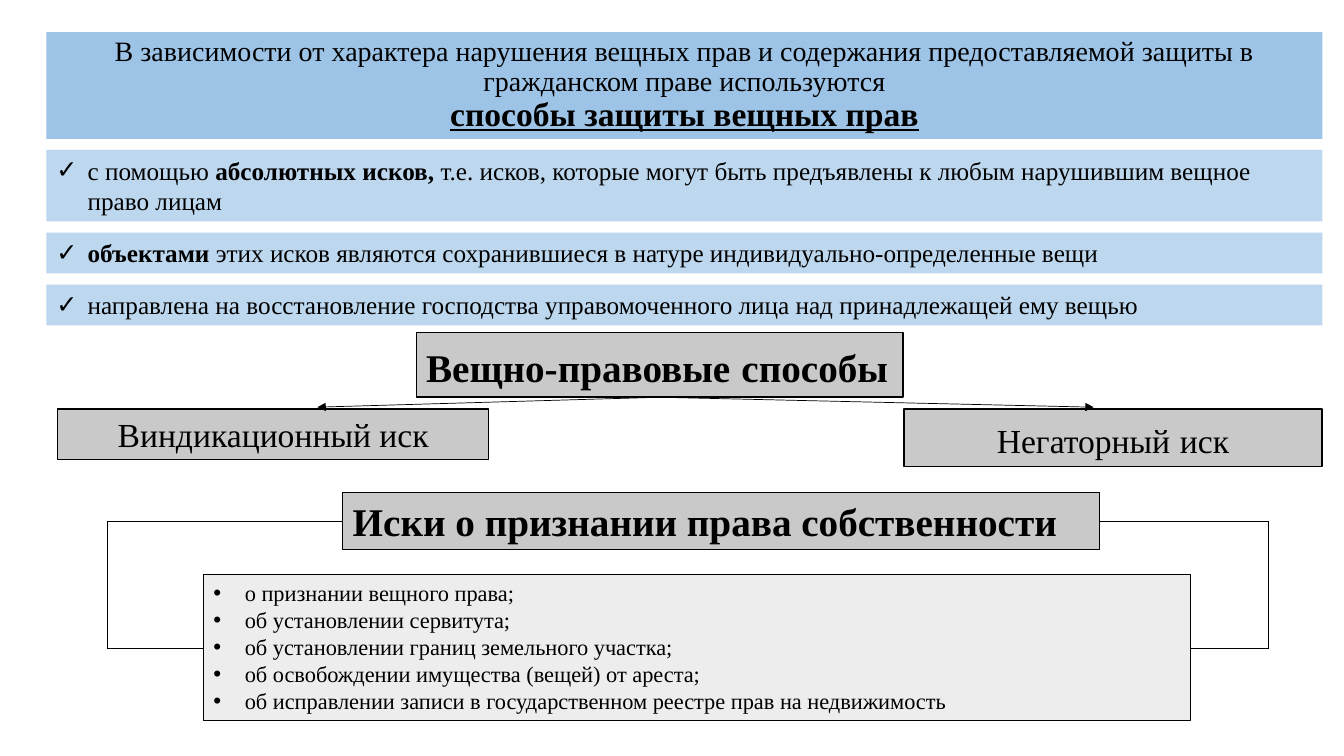
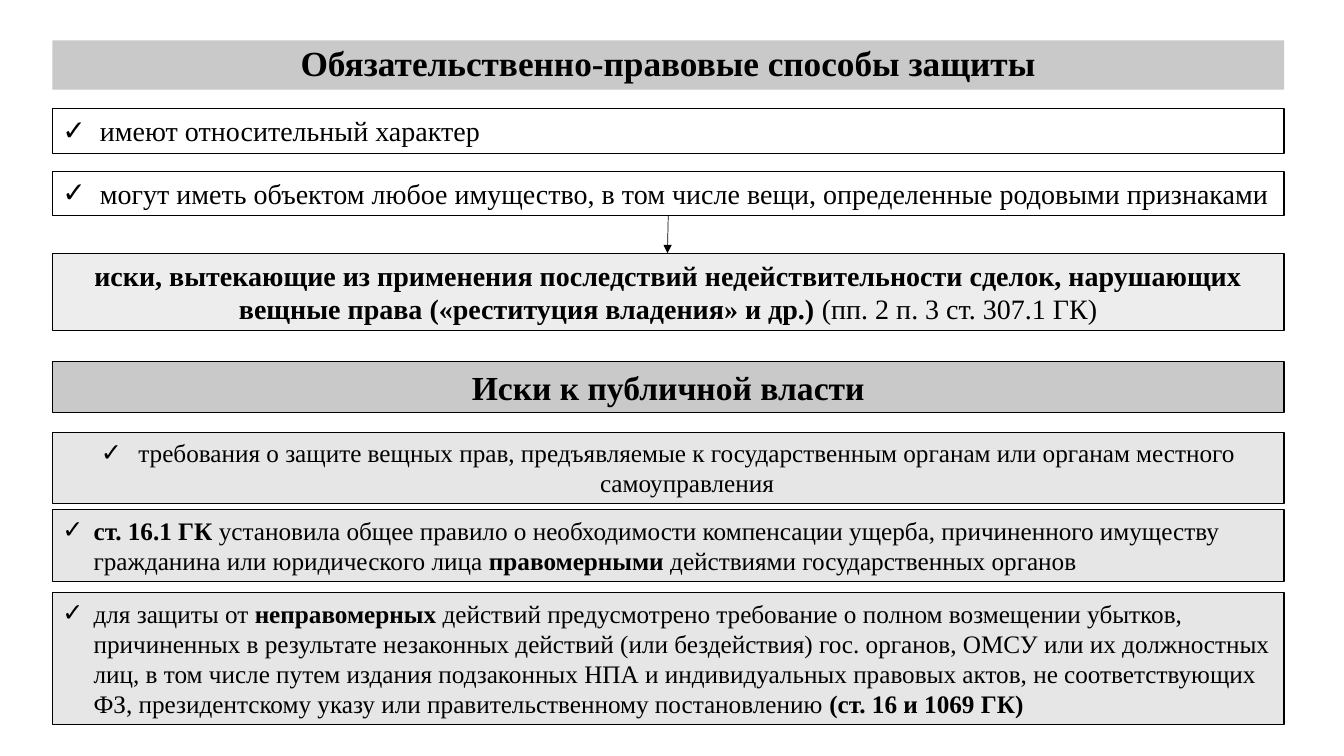
from lxml import etree
from pptx import Presentation
from pptx.dml.color import RGBColor
from pptx.enum import shapes, text
from pptx.oxml import ns
from pptx.util import Cm, Pt

COLOURS = {
    "black": "000000",
    "blue": "9DC3E6",
    "light_blue": "BDD7EE",
    "grey": "C9C9C9",
    "light_grey": "E7E6E6",
    "pale_grey": "EDEDED",
}
FONT = "Times New Roman"
CHECK, DOT = "✓", "•"
NARROW, WIDE = 0.79, 0.95  # bullet indents in cm
BOLD = {"bold": True}


def colour(name):
    return RGBColor.from_string(COLOURS[name])


class Deck:
    """The presentation, its shared style and the slide being filled."""

    def __init__(self):
        self.presentation = Presentation()
        self.presentation.slide_width = Cm(33.87)
        self.presentation.slide_height = Cm(19.05)
        self.slide = None

    def new_slide(self):
        self.slide = self.presentation.slides.add_slide(self.presentation.slide_layouts[6])

    def box(self, place, paragraphs, size, fill=None, line=0.75, bullet=None,
            indent=NARROW, centred=False, wrap=True):
        """Draw a text rectangle; each paragraph is a list of (text, font settings)."""
        shape = self.slide.shapes.add_shape(shapes.MSO_SHAPE.RECTANGLE, *map(Cm, place))
        shape.shadow.inherit = False
        if fill:
            shape.fill.solid()
            shape.fill.fore_color.rgb = colour(fill)
        else:
            shape.fill.background()
        if line:
            shape.line.color.rgb = colour("black")
            shape.line.width = Pt(line)
        else:
            shape.line.fill.background()
        frame = shape.text_frame
        frame.word_wrap = wrap
        frame.auto_size = text.MSO_AUTO_SIZE.SHAPE_TO_FIT_TEXT
        frame.vertical_anchor = text.MSO_ANCHOR.TOP
        for index, runs in enumerate(paragraphs):
            paragraph = frame.add_paragraph() if index else frame.paragraphs[0]
            paragraph.alignment = text.PP_ALIGN.CENTER if centred else text.PP_ALIGN.LEFT
            if bullet:
                self.bullet(paragraph, bullet, indent)
            paragraph.font.size = Pt(size)
            for words, settings in runs:
                self.run(paragraph, words, size, **settings)
        return shape

    def run(self, paragraph, words, size, bold=False, underline=False, own_size=None):
        run = paragraph.add_run()
        run.text = words
        font = run.font
        font.name = FONT
        font.size = Pt(own_size or size)
        font.bold = bold
        font.underline = underline
        font.color.rgb = colour("black")

    def bullet(self, paragraph, character, indent):
        properties = paragraph._p.get_or_add_pPr()
        properties.set("marL", str(Cm(indent)))
        properties.set("indent", str(-Cm(indent)))
        etree.SubElement(properties, ns.qn("a:buFont")).set("typeface", "Arial")
        etree.SubElement(properties, ns.qn("a:buChar")).set("char", character)

    def title(self, place, paragraphs, size, fill):
        shape = self.box(place, paragraphs, size, fill, line=None, centred=True)
        frame = shape.text_frame
        frame.auto_size = text.MSO_AUTO_SIZE.NONE
        frame.vertical_anchor = text.MSO_ANCHOR.MIDDLE
        for paragraph in frame.paragraphs:
            paragraph.line_spacing = 0.9

    def line(self, start, end, arrow=False):
        connector = self.slide.shapes.add_connector(
            shapes.MSO_CONNECTOR.STRAIGHT, *map(Cm, start + end))
        connector.line.color.rgb = colour("black")
        connector.line.width = Pt(0.5)
        if arrow:
            outline = connector.line._get_or_add_ln()
            etree.SubElement(outline, ns.qn("a:tailEnd")).set("type", "triangle")
        etree.SubElement(connector._element.spPr, ns.qn("a:effectLst"))

    def path_of_lines(self, points):
        for start, end in zip(points, points[1:]):
            self.line(start, end)


def property_methods(deck):
    deck.new_slide()
    left, width, gap = 1.17, 32.16, 0.28
    deck.title((left, 0.81, width, 2.69), [
        [("В зависимости от характера нарушения вещных прав и содержания "
          "предоставляемой защиты в гражданском праве используются", {})],
        [("способы защиты вещных прав", {"bold": True, "underline": True, "own_size": 24})],
    ], 20, "blue")

    features = [
        (1.8, [("с помощью ", {}), ("абсолютных исков, ", BOLD),
               ("т.е. исков, которые могут быть предъявлены к любым нарушившим "
                "вещное право лицам", {})]),
        (1.03, [("объектами ", BOLD),
                ("этих исков являются сохранившиеся в натуре "
                 "индивидуально-определенные вещи", {})]),
        (1.03, [("направлена на восстановление господства управомоченного лица "
                 "над принадлежащей ему вещью", {})]),
    ]
    top = 3.5 + gap
    for height, runs in features:
        deck.box((left, top, width, height), [runs], 18, "light_blue", None, CHECK)
        top += height + gap

    deck.box((10.49, 8.38, 12.27, 1.63), [[
        ("Вещно-правовые", BOLD), (" ", {"bold": True, "own_size": 32}), ("способы", BOLD),
    ]], 28, "grey", 1, wrap=False)
    deck.box((1.45, 10.31, 10.87, 1.27), [[("Виндикационный иск", {})]],
             24, "grey", 1, centred=True)
    deck.box((22.78, 10.31, 10.54, 1.45), [[
        ("Негаторный", {}), (" ", {"own_size": 28}), ("иск", {}),
    ]], 24, "grey", 1, centred=True)
    for target in (8, 27.56):
        deck.line((16.63, 10.01), (target, 10.26), arrow=True)

    claims = [
        "о признании вещного права;",
        "об установлении сервитута;",
        "об установлении границ земельного участка;",
        "об освобождении имущества (вещей) от ареста;",
        "об исправлении записи в государственном реестре прав на недвижимость",
    ]
    deck.box((5.13, 14.48, 24.87, 3.68), [[(claim, {})] for claim in claims],
             16, "pale_grey", bullet=DOT)
    deck.box((8.64, 12.4, 19.08, 1.45), [[("Иски о признании права собственности", BOLD)]],
             28, "grey")
    for heading_side, outer, list_side in ((8.64, 2.7, 5.13), (27.72, 31.97, 30)):
        deck.path_of_lines([(heading_side, 13.13), (outer, 13.13),
                            (outer, 16.33), (list_side, 16.33)])


def obligation_methods(deck):
    deck.new_slide()
    left, width = 1.32, 31.04
    deck.title((left, 1.02, width, 1.24),
               [[("Обязательственно-правовые способы защиты", BOLD)]], 25.2, "grey")
    features = [
        "имеют относительный характер",
        "могут иметь объектом любое имущество, в том числе вещи, "
        "определенные родовыми признаками",
    ]
    for index, feature in enumerate(features):
        deck.box((left, 2.74 + 1.58 * index, width, 1.12), [[(feature, {})]],
                 20, bullet=CHECK, indent=WIDE)
    deck.box((left, 6.38, width, 1.96), [[
        ("иски, вытекающие из применения последствий недействительности сделок, "
         "нарушающих вещные права («реституция владения» и др.) ", BOLD),
        ("(пп. 2 п. 3 ст. 307.1 ГК)", {}),
    ]], 20, "pale_grey", centred=True)
    deck.line((16.84, 5.44), (16.82, 6.38), arrow=True)

    deck.box((left, 9.12, width, 1.27), [[("Иски к публичной власти", BOLD)]],
             24, "grey", centred=True)
    deck.box((left, 10.9, width, 1.8), [[
        ("требования о защите вещных прав, предъявляемые к государственным органам "
         "или органам местного самоуправления", {}),
    ]], 18, "light_grey", bullet=CHECK, indent=WIDE, centred=True)
    rules = [
        (12.85, 1.8, [
            ("ст. 16.1 ГК ", BOLD),
            ("установила общее правило о необходимости компенсации ущерба, причиненного "
             "имуществу гражданина или юридического лица ", {}),
            ("правомерными ", BOLD),
            ("действиями государственных органов", {})]),
        (14.94, 3.33, [
            ("для защиты от ", {}),
            ("неправомерных ", BOLD),
            ("действий предусмотрено требование о полном возмещении убытков, причиненных "
             "в результате незаконных действий (или бездействия) гос. органов, ОМСУ или их "
             "должностных лиц, в том числе путем издания подзаконных НПА и индивидуальных "
             "правовых актов, не соответствующих ФЗ, президентскому указу или "
             "правительственному постановлению ", {}),
            ("(ст. 16 и 1069 ГК)", BOLD)]),
    ]
    for top, height, runs in rules:
        deck.box((left, top, width, height), [runs], 18, "light_grey", bullet=CHECK)


def main():
    deck = Deck()
    property_methods(deck)
    obligation_methods(deck)
    deck.presentation.save("out.pptx")


if __name__ == "__main__":
    main()
